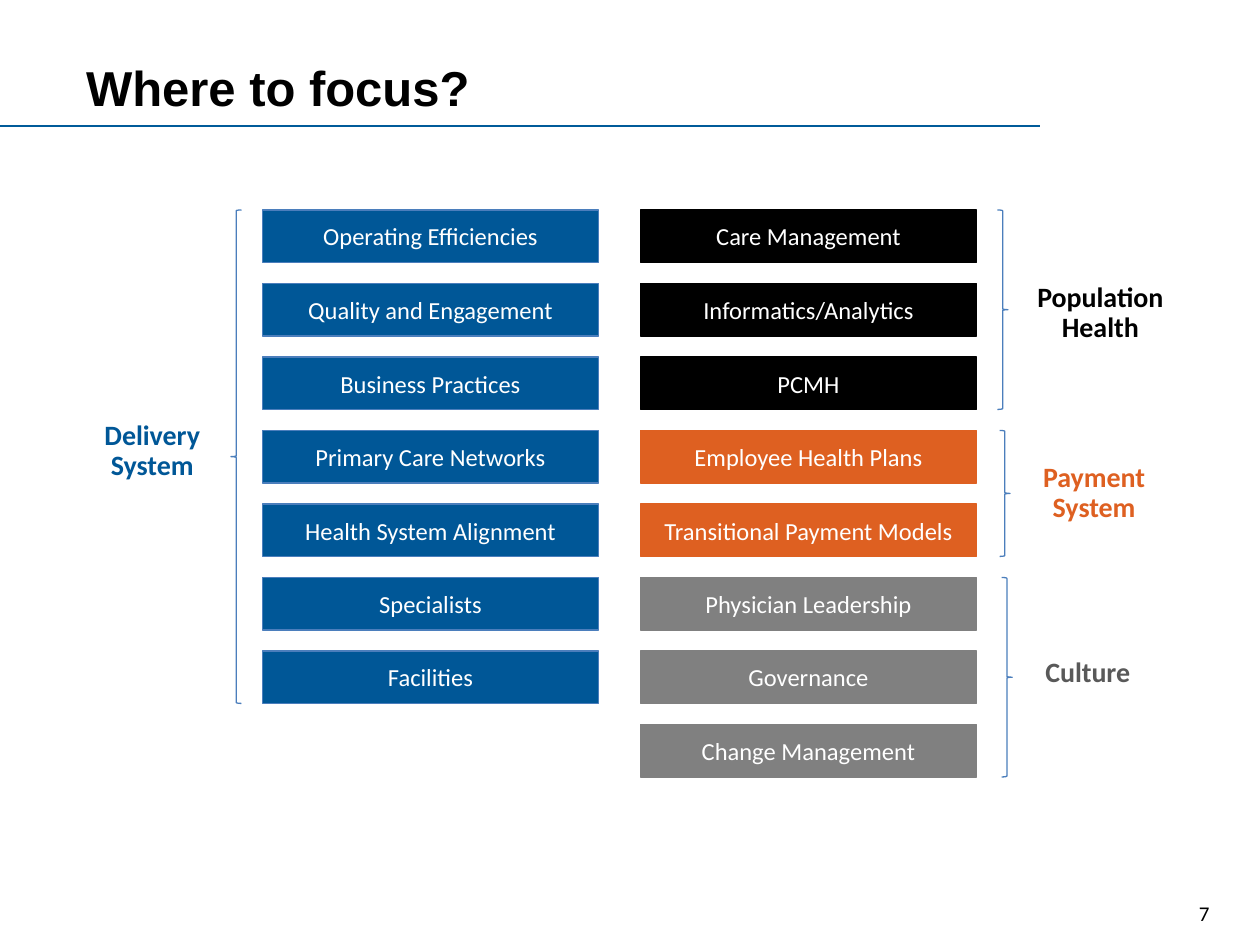
from lxml.etree import SubElement
from pptx import Presentation
from pptx.dml.color import RGBColor
from pptx.enum.shapes import MSO_CONNECTOR, MSO_SHAPE as Shape
from pptx.enum.text import MSO_ANCHOR as Anchor, PP_ALIGN as Align
from pptx.oxml.ns import qn
from pptx.util import Emu, Pt

EMU_PER_PX = 7620  # 120 px to the inch
BLUE, BLACK, ORANGE, GRAY = "005797", "000000", "DE6021", "808080"
EDGE_BLUE, DARK_GRAY, RULE_BLUE, WHITE = "4B7EBC", "595959", "005B99", "FFFFFF"

# Grid of topic boxes
TOP, PITCH, BOX_W, BOX_H = 200, 70, 320, 50
LEFT_COLUMN, RIGHT_COLUMN = 250, 610


def color(hex_code):
    return RGBColor.from_string(hex_code)


def px(*lengths):
    return [Emu(length * EMU_PER_PX) for length in lengths]


def span(count):
    """Height of a run of boxes, gaps included."""
    return (count - 1) * PITCH + BOX_H


class FocusSlide:
    body_font = "Calibri"
    line_width = Pt(0.75)

    def __init__(self, deck):
        self.slide = deck.slides.add_slide(deck.slide_layouts[5])

    def set_text(self, frame, text, size, hex_code, bold=False, align=Align.LEFT,
                 anchor=Anchor.TOP, font=body_font):
        frame.word_wrap = True
        frame.vertical_anchor = anchor
        frame.text = text
        paragraph = frame.paragraphs[0]
        paragraph.alignment = align
        for run in paragraph.runs:
            run.font.name, run.font.size, run.font.bold = font, Pt(size), bold
            run.font.color.rgb = color(hex_code)
        return paragraph

    def outline(self, line, hex_code):
        line.color.rgb = color(hex_code)
        line.width = self.line_width

    def title(self, text, *place):
        heading = self.slide.shapes.title
        heading.left, heading.top, heading.width, heading.height = px(*place)
        self.set_text(heading.text_frame, text, 28, BLACK, bold=True, font="Arial")

    def rule(self, *ends):
        rule = self.slide.shapes.add_connector(MSO_CONNECTOR.STRAIGHT, *px(*ends))
        self.outline(rule.line, RULE_BLUE)
        SubElement(rule._element.spPr, qn("a:effectLst"))

    def text(self, text, place, size, hex_code, **style):
        box = self.slide.shapes.add_textbox(*px(*place))
        return self.set_text(box.text_frame, text, size, hex_code, **style)

    def label(self, text, place, hex_code):
        paragraph = self.text(text, place, 16, hex_code, bold=True, align=Align.CENTER)
        paragraph.line_spacing = 0.9

    def topic(self, text, left, row, fill, edge):
        box = self.slide.shapes.add_shape(
            Shape.RECTANGLE, *px(left, TOP + row * PITCH, BOX_W, BOX_H))
        box.shadow.inherit = False
        box.fill.solid()
        box.fill.fore_color.rgb = color(fill)
        self.outline(box.line, edge)
        self.set_text(box.text_frame, text, 14, WHITE, align=Align.CENTER,
                      anchor=Anchor.MIDDLE)

    def brace(self, kind, left, row, count):
        brace = self.slide.shapes.add_shape(
            kind, *px(left, TOP + row * PITCH, 10, span(count)))
        brace.shadow.inherit = False
        brace.fill.background()
        self.outline(brace.line, EDGE_BLUE)

    def group(self, name, topics, column, first_row, fill, edge,
              brace_kind, brace_left, label_place, label_color):
        for row, topic in enumerate(topics, first_row):
            self.topic(topic, column, row, fill, edge)
        self.brace(brace_kind, brace_left, first_row, len(topics))
        self.label(name, label_place, label_color)


def main():
    deck = Presentation()
    deck.slide_width, deck.slide_height = px(1200, 900)
    focus = FocusSlide(deck)

    # Heading and page number
    focus.title("Where to focus?", 70, 49, 870, 60)
    focus.rule(0, 120, 990, 120)
    focus.text("7", (1130, 852, 70, 48), 12, BLACK)

    # Left column
    focus.group("Delivery System",
                ["Operating Efficiencies", "Quality and Engagement", "Business Practices",
                 "Primary Care Networks", "Health System Alignment", "Specialists",
                 "Facilities"],
                LEFT_COLUMN, 0, BLUE, EDGE_BLUE,
                Shape.LEFT_BRACE, 220, (70, 395, 150, 80), BLUE)

    # Right column, one group under another
    right_groups = [
        ("Population Health", ["Care Management", "Informatics/Analytics", "PCMH"],
         BLACK, 950, (953, 264, 190, 80), BLACK),
        ("Payment System", ["Employee Health Plans", "Transitional Payment Models"],
         ORANGE, 952, (967, 435, 150, 80), ORANGE),
        ("Culture", ["Physician Leadership", "Governance", "Change Management"],
         GRAY, 954, (961, 621, 150, 80), DARK_GRAY),
    ]
    row = 0
    for name, topics, fill, brace_left, label_place, label_color in right_groups:
        focus.group(name, topics, RIGHT_COLUMN, row, fill, fill,
                    Shape.RIGHT_BRACE, brace_left, label_place, label_color)
        row += len(topics)

    deck.save("out.pptx")


if __name__ == "__main__":
    main()
